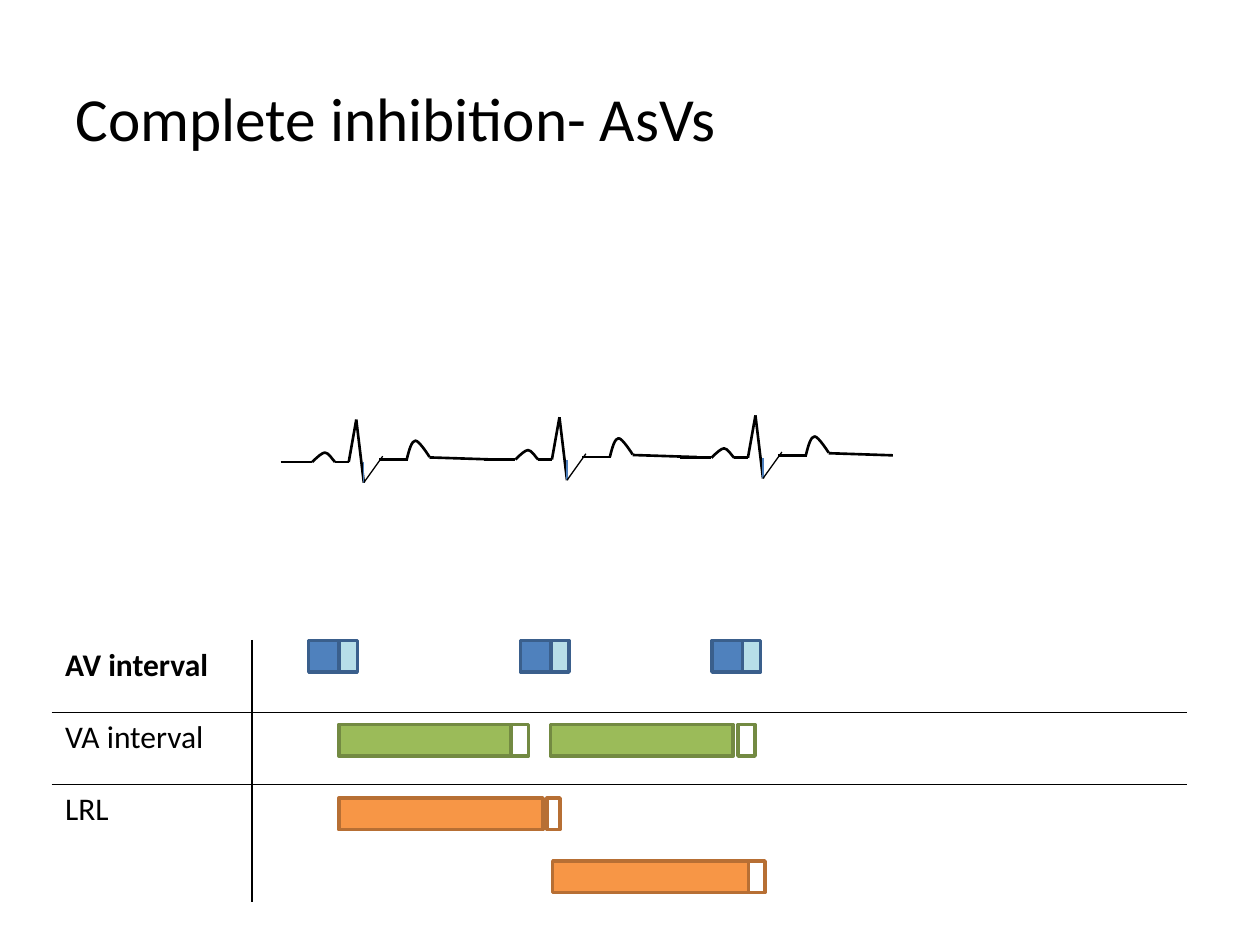
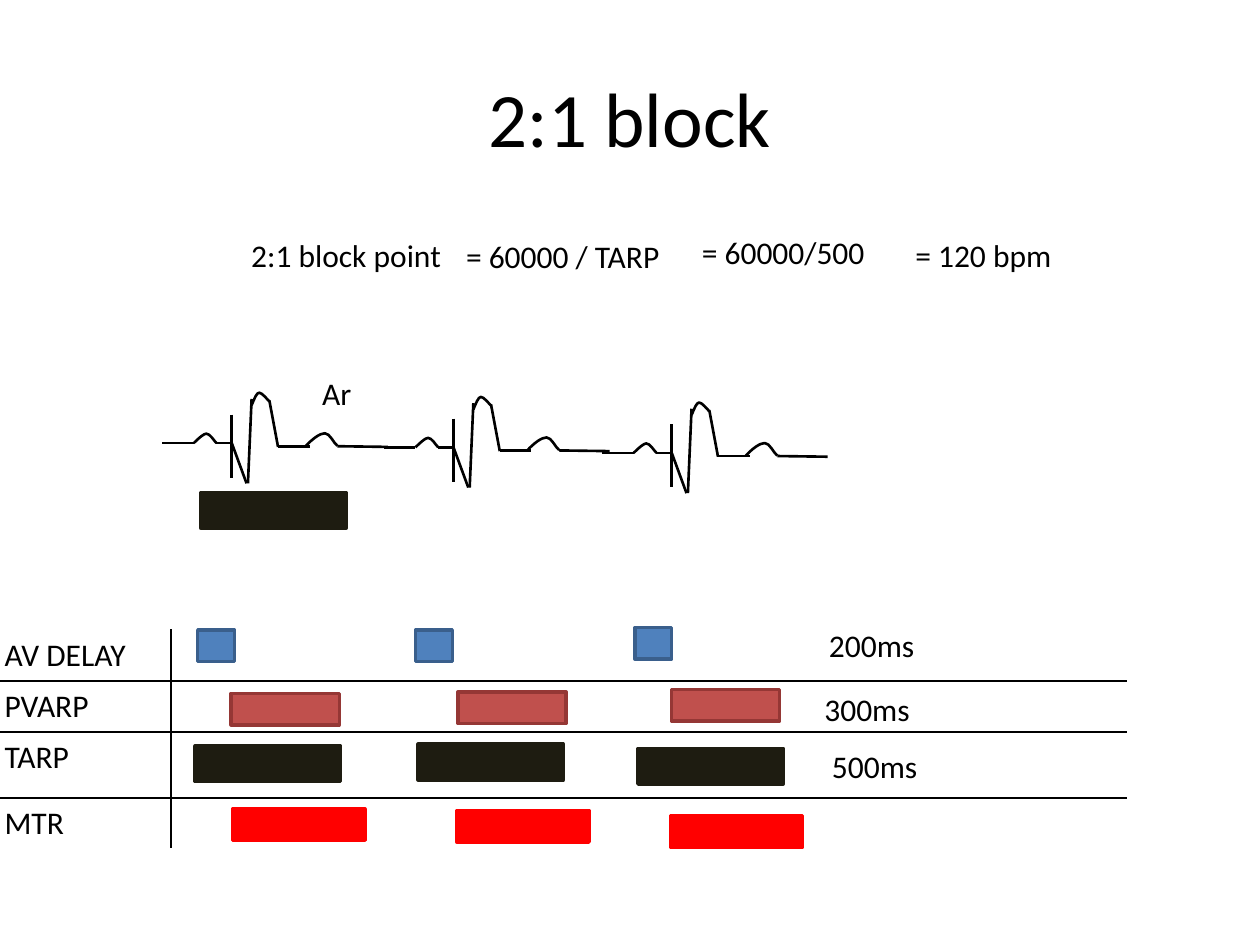
from lxml import etree
from pptx import Presentation
from pptx.dml.color import RGBColor
from pptx.enum.shapes import MSO_CONNECTOR, MSO_SHAPE
from pptx.enum.text import MSO_AUTO_SIZE, PP_ALIGN
from pptx.oxml.ns import qn
from pptx.util import Pt

LEFT, CENTER = PP_ALIGN.LEFT, PP_ALIGN.CENTER
STRAIGHT, RECTANGLE = MSO_CONNECTOR.STRAIGHT, MSO_SHAPE.RECTANGLE
GROW = MSO_AUTO_SIZE.SHAPE_TO_FIT_TEXT
FONT = "Calibri"
TITLE_ONLY = 5

COLORS = {
    "ink": "000000",
    "paper": "FFFFFF",
    "trace blue": "4B7EBC",
    "blue": "4F81BD",
    "blue edge": "3A5F8C",
    "pale blue": "B7DEE8",
    "green": "9BBB59",
    "green edge": "738A42",
    "orange": "F79646",
    "orange edge": "B76F34",
    "brick": "C0504D",
    "brick edge": "953735",
    "charcoal": "1E1C11",
    "red": "FF0000",
}

P_WAVE = [(18, 0), (20.9, -2.9), (23.8, -5.4), (25.2, -5.4), (27.4, -5.4), (29.5, -1.4), (31, 0)]

SENSED_BEAT = {
    "strokes": [
        (0, 0, 18, 0), (31, 0, 38.9, 0), (38.9, 0, 43.2, -24.2), (43.2, -24.2, 47.5, 11.8),
        (56.2, -1.4, 72.7, -1.4), (85, -2.6, 121.7, -1.4),
    ],
    "fine strokes": [(47.5, 11.8, 47.5, 0, "trace blue"), (47.5, 11.8, 58.3, -3.3, "ink")],
    "waves": [
        P_WAVE,
        [(72, -1.4), (73.4, -7.2), (74.9, -12.2), (77, -12.2), (79.2, -12.2), (85, -2.9), (85, -2.9)],
    ],
}

PACED_BEAT = {
    "strokes": [
        (0, 0, 18, 0), (31, 0, 38.9, 0), (39.6, -0.4, 48.2, 23), (51.1, -25.2, 49, 23),
        (66.2, 2.2, 61.2, -24.5), (66.2, 1.8, 84.2, 1.8), (39.6, -16.3, 39.6, 19.7),
        (100.1, 1.8, 128.9, 2.2),
    ],
    "fine strokes": [],
    "waves": [
        P_WAVE,
        [(51.1, -21.6), (52.6, -25.2), (54, -28.8), (55.4, -28.8), (56.9, -29), (60.5, -24.5), (61.2, -23.8)],
        [(82.1, 1.6), (85.7, -2.2), (90, -5.6), (92.9, -5.6), (95.8, -5.6), (97.9, 0), (100.1, 1.6)],
    ],
}


def rgb(color):
    return RGBColor.from_string(COLORS[color])


def style_text(paragraph, size, bold=False):
    for run in paragraph.runs:
        run.font.name = FONT
        run.font.size = Pt(size)
        run.font.bold = bold
        run.font.color.rgb = rgb("ink")


def set_title(slide, text, size, align):
    title = slide.shapes.title
    title.left, title.top, title.width, title.height = Pt(36), Pt(21.6), Pt(648), Pt(90)
    title.text_frame.text = text
    heading = title.text_frame.paragraphs[0]
    heading.alignment = align
    style_text(heading, size)


def add_label(slide, text, left, top, width, wrap):
    label = slide.shapes.add_textbox(Pt(left), Pt(top), Pt(width), Pt(29.1))
    label.text_frame.text = text
    label.text_frame.word_wrap = wrap
    label.text_frame.auto_size = GROW
    style_text(label.text_frame.paragraphs[0], 18)


def add_stroke(slide, start, end, width=1.5, color="ink"):
    stroke = slide.shapes.add_connector(STRAIGHT, *map(Pt, start), *map(Pt, end))
    stroke.line.width = Pt(width)
    stroke.line.color.rgb = rgb(color)
    etree.SubElement(stroke._element.spPr, qn("a:effectLst"))


def bend_segments(wave):
    segments = list(wave._element.iter(qn("a:lnTo")))
    outline = segments[0].getparent()
    for first in range(0, len(segments), 3):
        curve = etree.SubElement(outline, qn("a:cubicBezTo"))
        for segment in segments[first:first + 3]:
            curve.append(segment[0])
            outline.remove(segment)


def add_wave(slide, knots):
    builder = slide.shapes.build_freeform(*map(Pt, knots[0]))
    builder.add_line_segments([(Pt(x), Pt(y)) for x, y in knots[1:]], close=False)
    wave = builder.convert_to_shape()
    bend_segments(wave)
    wave.shadow.inherit = False
    wave.fill.background()
    wave.line.width = Pt(1.5)
    wave.line.color.rgb = rgb("ink")


def add_beat(slide, beat, left, baseline):
    strokes = [(*ends, 1.5, "ink") for ends in beat["strokes"]]
    strokes += [(*ends, 0.75, color) for *ends, color in beat["fine strokes"]]
    for x1, y1, x2, y2, width, color in strokes:
        add_stroke(slide, (left + x1, baseline + y1), (left + x2, baseline + y2), width, color)
    for knots in beat["waves"]:
        add_wave(slide, [(left + x, baseline + y) for x, y in knots])


def add_bar(slide, left, top, width, height, fill, edge):
    bar = slide.shapes.add_shape(RECTANGLE, Pt(left), Pt(top), Pt(width), Pt(height))
    bar.shadow.inherit = False
    bar.fill.solid()
    bar.fill.fore_color.rgb = rgb(fill)
    bar.line.width = Pt(2)
    bar.line.color.rgb = rgb(edge)


def set_border(cell, side, color):
    border = etree.SubElement(cell._tc.get_or_add_tcPr(), qn(f"a:ln{side}"), w=str(Pt(1)))
    fill = etree.SubElement(border, qn("a:solidFill"))
    etree.SubElement(fill, qn("a:srgbClr"), val=COLORS[color])


def add_interval_table(slide, box, label_width, row_heights, names, bold_first):
    left, top, width = box
    frame = slide.shapes.add_table(
        len(names), 2, Pt(left), Pt(top), Pt(width), Pt(sum(row_heights)))
    table = frame.table
    table.columns[0].width = Pt(label_width)
    table.columns[1].width = Pt(width - label_width)
    last = len(names) - 1
    for row, (name, height) in enumerate(zip(names, row_heights)):
        table.rows[row].height = Pt(height)
        for column in range(2):
            cell = table.cell(row, column)
            inner = {"L": column == 1, "R": column == 0, "T": row > 0, "B": row < last}
            for side, shared in inner.items():
                set_border(cell, side, "ink" if shared else "paper")
            cell.fill.solid()
            cell.fill.fore_color.rgb = rgb("paper")
        table.cell(row, 0).text_frame.text = name
        style_text(table.cell(row, 0).text_frame.paragraphs[0], 18, bold_first and row == 0)


def add_tailed_bars(slide, box, rows):
    left, top, _ = box
    for offset, fill, edge, tail_fill, spans in rows:
        for start, length, tail_start, tail_length in spans:
            add_bar(slide, left + start, top + offset, length, 18, fill, edge)
            add_bar(slide, left + tail_start, top + offset, tail_length, 18, tail_fill, edge)


def add_period_bars(slide, box, rows):
    left, top, _ = box
    for fill, edge, width, height, places in rows:
        for x, y in places:
            add_bar(slide, left + x, top + y, width, height, fill, edge)


def build_inhibition_slide(slide):
    set_title(slide, "Complete inhibition- AsVs", 35, LEFT)
    box = (30, 366, 648)
    add_interval_table(slide, box, 114, [41.1, 41.1, 67.6], ["AV interval", "VA interval", "LRL"], True)
    for left, baseline in [(160.4, 264), (276.5, 262.6), (388.5, 261.6)]:
        add_beat(slide, SENSED_BEAT, left, baseline)
    av_spans = [(x, 17.5, x + 17.5, 10.3) for x in (146.4, 267.4, 376.8)]
    add_tailed_bars(slide, box, [
        (0, "blue", "blue edge", "pale blue", av_spans),
        (48, "green", "green edge", "paper", [(163.6, 98.6, 262.2, 9.8), (284.6, 104.4, 391.7, 9.8)]),
        (90, "orange", "orange edge", "paper", [(163.6, 116.8, 282.6, 7.4)]),
        (126, "orange", "orange edge", "paper", [(285.8, 113.2, 397.6, 9.6)]),
    ])


def build_block_slide(slide):
    set_title(slide, "2:1 block", 44, CENTER)
    for left, baseline in [(92.7, 253.2), (219.4, 255.6), (344.1, 258.8)]:
        add_beat(slide, PACED_BEAT, left, baseline)
    box = (-4.6, 360, 648)
    add_interval_table(
        slide, box, 102.2, [29.2, 29.2, 37.6, 29.2], ["AV DELAY", "PVARP", "TARP", "MTR"], False)
    add_period_bars(slide, box, [
        ("blue", "blue edge", 21.1, 18, [(117.6, 0), (242, 0), (367.4, -1.4)]),
        ("brick", "brick edge", 61.9, 18, [(136.7, 36.2), (266.3, 35.5), (388.3, 34)]),
        ("charcoal", "charcoal", 83, 20.4,
         [(116.2, 66.2), (243.6, 65.3), (369.2, 67.7), (119.4, -78.5)]),
        ("red", "red", 75.6, 18, [(137.5, 102.2), (265.6, 103.2), (387.7, 106)]),
    ])
    for text, left, top, width, wrap in [
        ("Ar", 177, 210.2, 31.7, False),
        ("2:1 block point", 136.5, 131.4, 139, True),
        ("= 60000 / TARP", 259.2, 131.8, 130.3, True),
        ("= 60000/500", 394, 129.6, 108.7, False),
        ("= 120 bpm", 516, 131.4, 93.6, False),
        ("200ms", 466.6, 354.2, 64.1, False),
        ("300ms", 464, 391, 64.1, False),
        ("500ms", 468.3, 423.4, 64.1, False),
    ]:
        add_label(slide, text, left, top, width, wrap)


def main():
    deck = Presentation()
    deck.slide_width, deck.slide_height = Pt(720), Pt(540)
    for build in (build_inhibition_slide, build_block_slide):
        build(deck.slides.add_slide(deck.slide_layouts[TITLE_ONLY]))
    deck.save("out.pptx")


if __name__ == "__main__":
    main()
